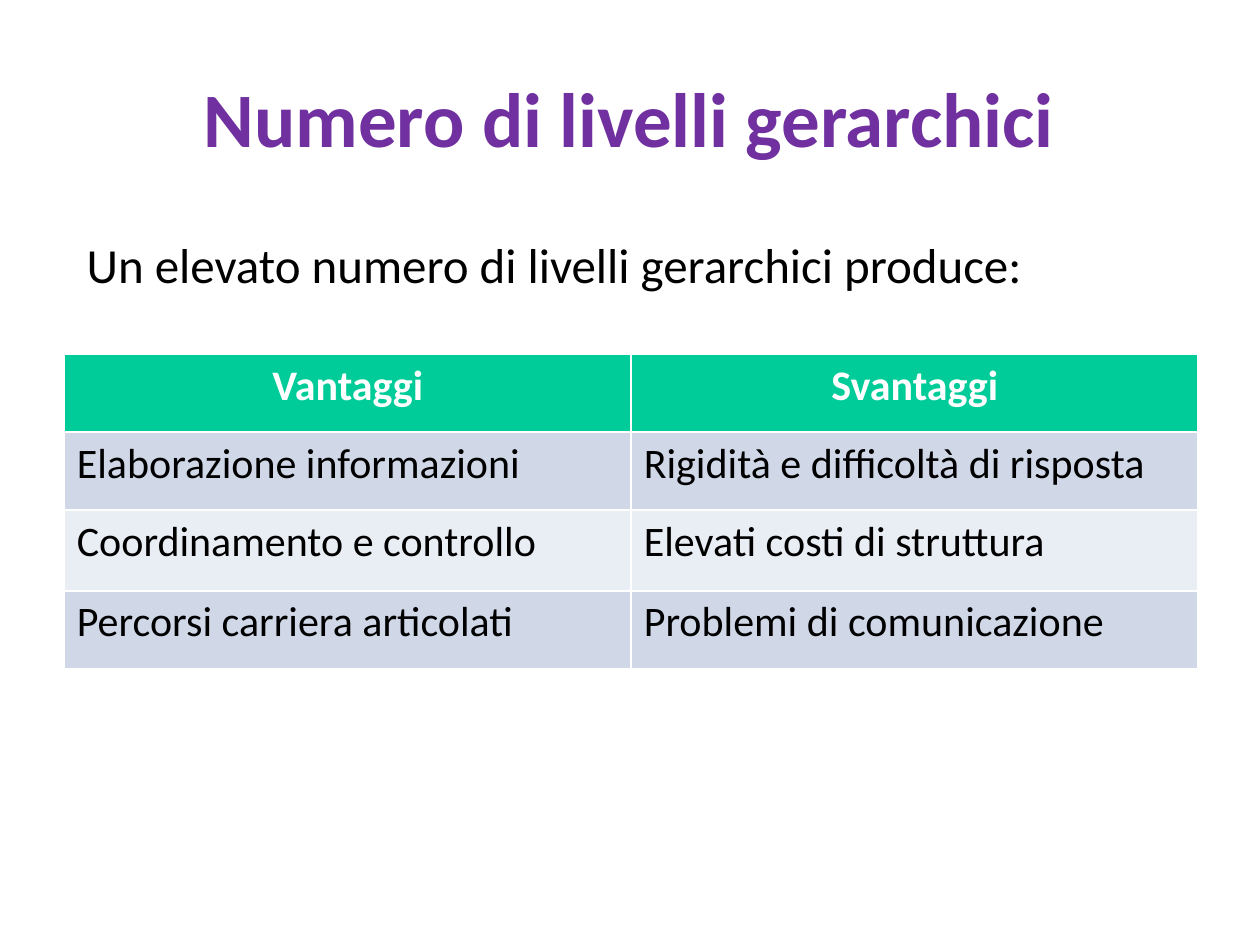
from pptx import Presentation
from pptx.dml.color import RGBColor
from pptx.enum.text import MSO_ANCHOR, PP_ALIGN
from pptx.util import Inches, Pt

MIDDLE = MSO_ANCHOR.MIDDLE
LEFT, CENTER = PP_ALIGN.LEFT, PP_ALIGN.CENTER

FONT = "Calibri"
PURPLE = RGBColor(0x70, 0x30, 0xA0)
BLACK = RGBColor(0x00, 0x00, 0x00)
WHITE = RGBColor(0xFF, 0xFF, 0xFF)
GREEN = RGBColor(0x00, 0xCC, 0x99)
DARK_BAND = RGBColor(0xD0, 0xD8, 0xE8)
LIGHT_BAND = RGBColor(0xE9, 0xED, 0xF4)

ROWS = [
    ("Vantaggi", "Svantaggi"),
    ("Elaborazione informazioni", "Rigidità e difficoltà di risposta"),
    ("Coordinamento e controllo", "Elevati costi di struttura"),
    ("Percorsi carriera articolati", "Problemi di comunicazione"),
]
ROW_HEIGHTS = [0.62, 0.62, 0.64, 0.62]


def write(tf, text, size, color, bold=False, align=LEFT):
    """Write one formatted run into the first paragraph of a text frame."""
    p = tf.paragraphs[0]
    p.alignment = align
    r = p.add_run()
    r.text = text
    r.font.name = FONT
    r.font.size = Pt(size)
    r.font.bold = bold
    r.font.color.rgb = color


def add_text(s, box, text, size, color, **style):
    """Add a wrapped, vertically centred text box."""
    tf = s.shapes.add_textbox(*map(Inches, box)).text_frame
    tf.word_wrap = True
    tf.vertical_anchor = MIDDLE
    write(tf, text, size, color, **style)


def add_comparison(s, left, top, width):
    """Add the table of advantages and disadvantages."""
    table = s.shapes.add_table(
        len(ROWS), len(ROWS[0]), Inches(left), Inches(top),
        Inches(width), Inches(sum(ROW_HEIGHTS))).table
    for i, (texts, height) in enumerate(zip(ROWS, ROW_HEIGHTS)):
        table.rows[i].height = Inches(height)
        header = i == 0
        band = DARK_BAND if i % 2 else LIGHT_BAND
        for j, text in enumerate(texts):
            cell = table.cell(i, j)
            cell.fill.solid()
            cell.fill.fore_color.rgb = GREEN if header else band
            write(cell.text_frame, text, 24, WHITE if header else BLACK,
                  bold=header, align=CENTER if header else LEFT)


def main():
    """Build and save the slide."""
    prs = Presentation()
    prs.slide_width, prs.slide_height = Inches(10), Inches(7.5)
    s = prs.slides.add_slide(prs.slide_layouts[6])
    add_text(s, (0.5, 0.14, 8.99, 1.57), "Numero di livelli gerarchici",
             44, PURPLE, bold=True, align=CENTER)
    add_comparison(s, 0.51, 2.81, 9)
    add_text(s, (0.59, 1.47, 9, 1.25),
             "Un elevato numero di livelli gerarchici produce:", 28, BLACK)
    prs.save("out.pptx")


if __name__ == "__main__":
    main()
